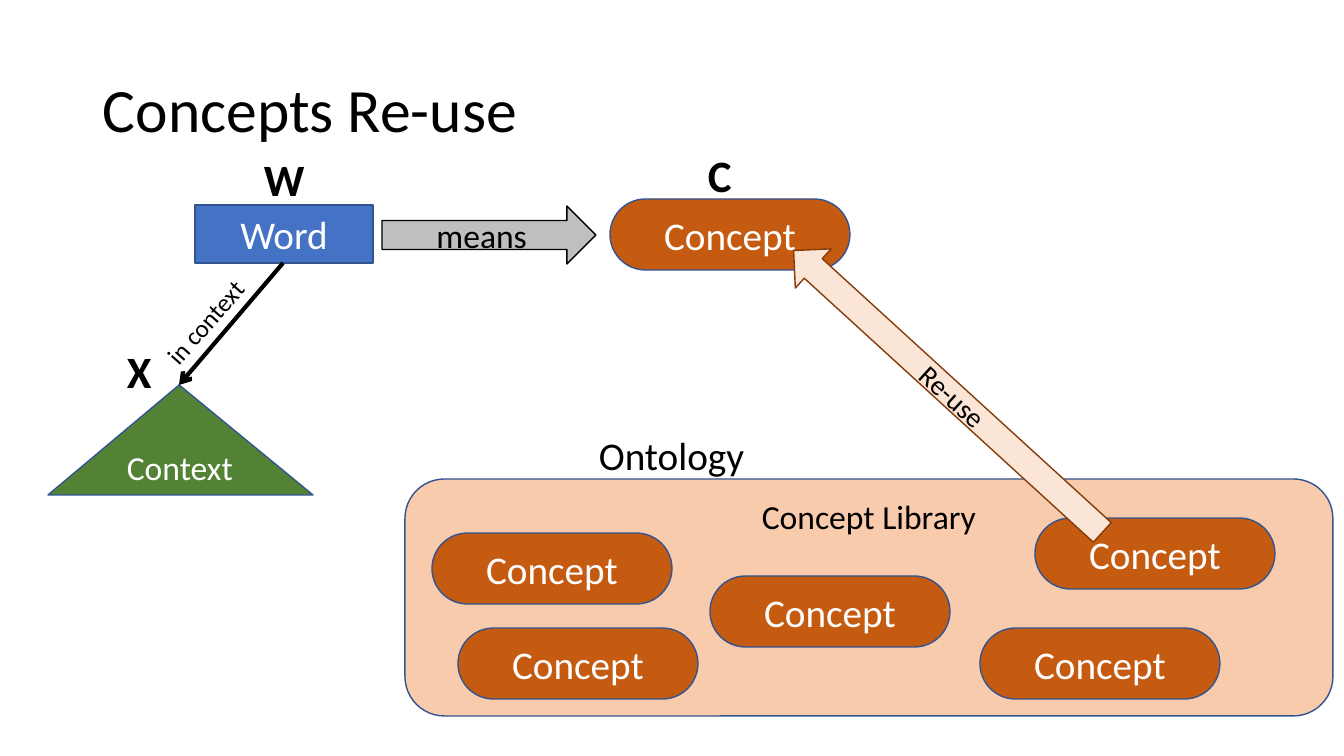
from lxml import etree
from pptx import Presentation
from pptx import util as u
from pptx.dml.color import RGBColor
from pptx.enum import shapes, text
from pptx.oxml.ns import qn

BLACK = RGBColor(0x00, 0x00, 0x00)
WHITE = RGBColor(0xFF, 0xFF, 0xFF)
NAVY = RGBColor(0x32, 0x54, 0x91)
BLUE = RGBColor(0x44, 0x72, 0xC4)
GREEN = RGBColor(0x54, 0x82, 0x35)
GRAY = RGBColor(0xBF, 0xBF, 0xBF)
RUST = RGBColor(0xC5, 0x5A, 0x11)
PEACH = RGBColor(0xF8, 0xCB, 0xAD)
CREAM = RGBColor(0xFB, 0xE5, 0xD6)
BROWN = RGBColor(0x84, 0x3C, 0x0B)

FONT = "Calibri"
EMU_PER_PX = 914400 / 100.8
SLIDE_SIZE = (1344, 756)
KIND = shapes.MSO_SHAPE

# Boxes are left, top, width, height in px.
TITLE = ("Concepts Re-use", (93, 40, 1159, 146))
LIBRARY = ("Concept Library", (405, 479, 928, 237))
WORD = ("Word", (195, 205, 178, 58))
CONTEXT = ("Context", (48, 385, 265, 110))
MEANS = ("means", (382, 206, 214, 58))
REUSE = ("Re-use", (739, 365, 418, 53))
REUSE_ANGLE = 42.4
CONTEXT_LINE = ((283, 263), (179, 385))
CONCEPT_SIZE = (240, 71)
CONCEPT_CORNERS = [(610, 199), (432, 533), (710, 576),
                   (1035, 518), (980, 628), (458, 628)]
# Words, box, size, bold, rotation
LABELS = [
    ("in context", (144, 301, 123, 40), 18, False, 311.4),
    ("W", (254, 147, 61, 65), 32, True, 0),
    ("X", (117, 339, 45, 65), 32, True, 0),
    ("C", (698, 143, 45, 65), 32, True, 0),
    ("Ontology", (589, 426, 167, 57), 28, False, 0),
]


def px(*lengths):
    return [u.Emu(round(length * EMU_PER_PX)) for length in lengths]


def write(shape, words, size, color, anchor, align, bold=False, wrap=True):
    frame = shape.text_frame
    frame.word_wrap = wrap
    frame.vertical_anchor = anchor
    para = frame.paragraphs[0]
    para.alignment = align
    span = para.add_run()
    span.text = words
    span.font.name = FONT
    span.font.size = u.Pt(size)
    span.font.bold = bold
    span.font.color.rgb = color
    return para


def add_block(page, kind, item, fill, size, color=WHITE, outline=NAVY,
              anchor=text.MSO_ANCHOR.MIDDLE):
    """Add a filled shape with centred text."""
    words, box = item
    shape = page.shapes.add_shape(kind, *px(*box))
    shape.shadow.inherit = False
    shape.fill.solid()
    shape.fill.fore_color.rgb = fill
    shape.line.color.rgb = outline
    shape.line.width = u.Pt(1)
    write(shape, words, size, color, anchor, text.PP_ALIGN.CENTER)
    return shape


def add_title(page):
    words, box = TITLE
    title = page.shapes.add_textbox(*px(*box))
    para = write(title, words, 44, BLACK, text.MSO_ANCHOR.MIDDLE,
                 text.PP_ALIGN.LEFT)
    para.line_spacing = 0.9


def add_context_arrow(page):
    start, end = CONTEXT_LINE
    arrow = page.shapes.add_connector(shapes.MSO_CONNECTOR.STRAIGHT,
                                      *px(*start, *end))
    arrow.line.color.rgb = BLACK
    arrow.line.width = u.Pt(3)
    etree.SubElement(arrow.line._get_or_add_ln(), qn("a:tailEnd"), type="arrow")
    etree.SubElement(arrow._element.spPr, qn("a:effectLst"))


def add_label(page, words, box, size, bold, rotation):
    label = page.shapes.add_textbox(*px(*box))
    label.rotation = rotation
    write(label, words, size, BLACK, text.MSO_ANCHOR.TOP,
          text.PP_ALIGN.LEFT, bold, wrap=False)
    label.text_frame.auto_size = text.MSO_AUTO_SIZE.SHAPE_TO_FIT_TEXT


def main():
    deck = Presentation()
    deck.slide_width, deck.slide_height = px(*SLIDE_SIZE)
    page = deck.slides.add_slide(deck.slide_layouts[6])

    add_block(page, KIND.ROUNDED_RECTANGLE, LIBRARY, PEACH, 24, BLACK,
              anchor=text.MSO_ANCHOR.TOP)
    add_title(page)
    add_block(page, KIND.RECTANGLE, WORD, BLUE, 28)
    context = add_block(page, KIND.ISOSCELES_TRIANGLE, CONTEXT, GREEN, 24)
    context.adjustments[0] = 0.495
    add_block(page, KIND.RIGHT_ARROW, MEANS, GRAY, 24, BLACK, BLACK)
    add_context_arrow(page)

    for corner in CONCEPT_CORNERS:
        concept = add_block(page, KIND.ROUNDED_RECTANGLE,
                            ("Concept", corner + CONCEPT_SIZE), RUST, 28)
        concept.adjustments[0] = 0.5

    reuse = add_block(page, KIND.RIGHT_ARROW, REUSE, CREAM, 20, BLACK, BROWN)
    reuse.rotation = REUSE_ANGLE
    reuse._element.spPr.find(qn("a:xfrm")).set("flipH", "1")

    for label in LABELS:
        add_label(page, *label)

    deck.save("out.pptx")


if __name__ == "__main__":
    main()
